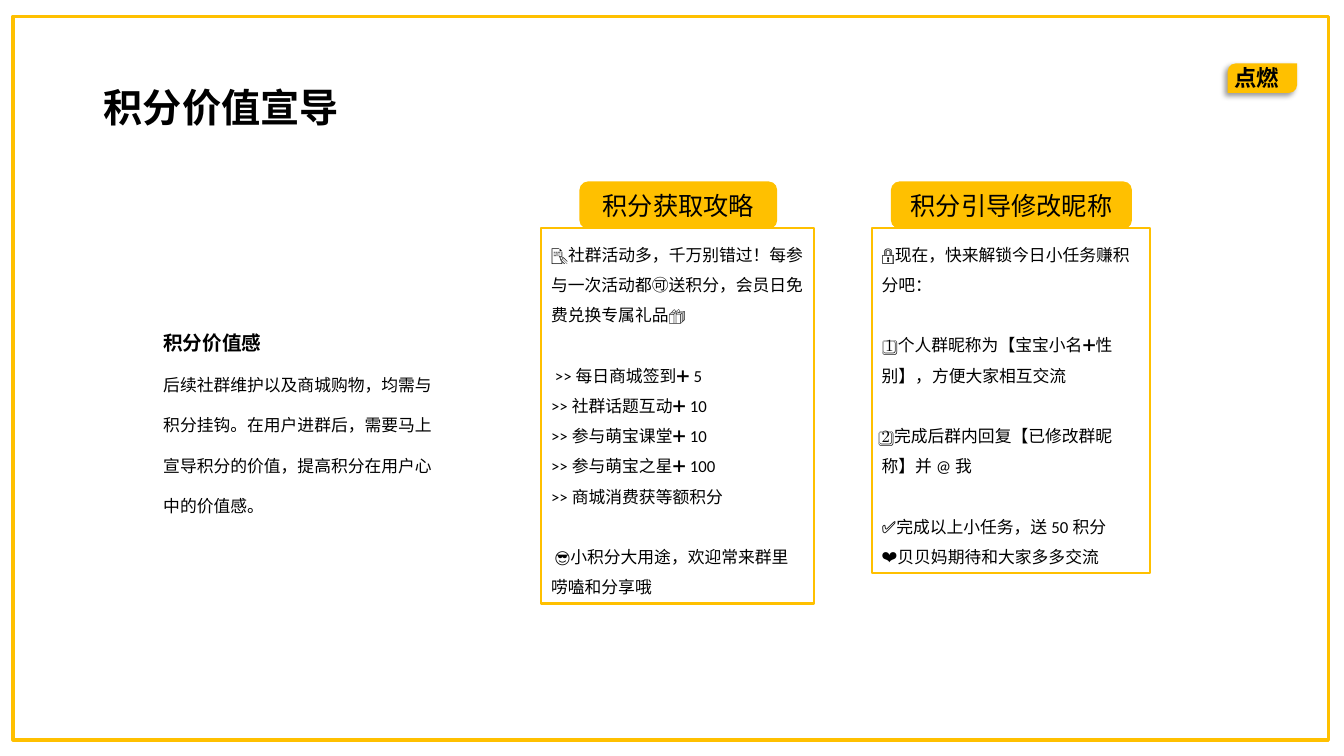
import pptx
import pptx.dml.color
import pptx.enum.shapes
import pptx.enum.text
import pptx.oxml
import pptx.oxml.ns
import pptx.util

Cm = pptx.util.Cm
Pt = pptx.util.Pt
SHAPE = pptx.enum.shapes.MSO_SHAPE
ALIGN = pptx.enum.text.PP_ALIGN
ANCHOR = pptx.enum.text.MSO_ANCHOR
AMBER, BLACK = "FFC000", "000000"
BLOCK_GAP = 21.6  # one line of the card text, in points


def paint(color_format, hex_color):
    color_format.rgb = pptx.dml.color.RGBColor.from_string(hex_color)


def write(frame, lines, align=ALIGN.LEFT, spacing=1.0, anchor=ANCHOR.MIDDLE):
    """Fill a text frame with (text, size, bold, space before) lines."""
    frame.word_wrap = True
    frame.auto_size = pptx.enum.text.MSO_AUTO_SIZE.NONE
    frame.vertical_anchor = anchor
    for number, (text, size, bold, before) in enumerate(lines):
        paragraph = frame.add_paragraph() if number else frame.paragraphs[0]
        properties = paragraph._p.get_or_add_pPr()
        properties.set("marL", "0")
        properties.set("indent", "0")
        properties.append(pptx.oxml.parse_xml(
            f'<a:buNone {pptx.oxml.ns.nsdecls("a")}/>'))
        paragraph.alignment = align
        paragraph.line_spacing = spacing
        paragraph.space_before = Pt(before)
        run = paragraph.add_run()
        run.text = text
        run.font.name = "Calibri"
        run.font.size = Pt(size)
        run.font.bold = bold
        paint(run.font.color, BLACK)


deck = pptx.Presentation()
deck.slide_width, deck.slide_height = Cm(33.87), Cm(19.05)
slide = deck.slides.add_slide(deck.slide_layouts[1])
shapes = slide.shapes

# Page frame
border = shapes.add_shape(SHAPE.RECTANGLE, Cm(0.33), Cm(0.41), Cm(33.15), Cm(18.24))
border.shadow.inherit = False
border.fill.background()
paint(border.line.color, AMBER)
border.line.width = Pt(2.25)

# Corner tag
tag = shapes.add_shape(SHAPE.ROUND_2_DIAG_RECTANGLE, Cm(30.94), Cm(1.6), Cm(1.75), Cm(0.74))
tag.adjustments[0] = 0.274
tag.fill.solid()
paint(tag.fill.fore_color, AMBER)
tag.line.fill.background()
tag.shadow.inherit = False
effects = tag._element.spPr.find(pptx.oxml.ns.qn("a:effectLst"))
effects.append(pptx.oxml.parse_xml(
    f'<a:outerShdw {pptx.oxml.ns.nsdecls("a")} blurRad="{Pt(4)}" dist="{Pt(3)}" '
    'dir="8100000" algn="tr" rotWithShape="0">'
    f'<a:srgbClr val="{BLACK}"><a:alpha val="40000"/></a:srgbClr></a:outerShdw>'))
tag_label = shapes.add_textbox(Cm(30.86), Cm(1.5), Cm(1.75), Cm(0.94))
write(tag_label.text_frame, [("点燃", 16, True, 0)], anchor=ANCHOR.TOP)

# Title and explanation
title = shapes.title
title.left, title.top, title.width, title.height = Cm(2.16), Cm(1.96), Cm(6.83), Cm(1.45)
write(title.text_frame, [("积分价值宣导", 28, True, 0)], ALIGN.CENTER, anchor=ANCHOR.TOP)

value = slide.placeholders[1]
value.left, value.top, value.width, value.height = Cm(3.86), Cm(7.62), Cm(7.67), Cm(5.56)
write(value.text_frame, [
    ("积分价值感", 14, True, 0),
    ("后续社群维护以及商城购物，均需与积分挂钩。在用户进群后，需要马上"
     "宣导积分的价值，提高积分在用户心中的价值感。", 12, False, 0),
], spacing=2.0, anchor=ANCHOR.TOP)

# Cards: heading, heading left and width, card left, width and height, text blocks
cards = [
    ("积分获取攻略", 14.63, 4.93, 13.64, 6.88, 9.47, [
        ["📝社群活动多，千万别错过！每参与一次活动都🉑️送积分，会员日免费兑换专属礼品🎁"],
        [" >>每日商城签到➕5", ">>社群话题互动➕10", ">>参与萌宝课堂➕10",
         ">>参与萌宝之星➕100", ">>商城消费获等额积分"],
        [" 😎小积分大用途，欢迎常来群里唠嗑和分享哦"],
    ]),
    ("积分引导修改昵称", 22.48, 6.02, 21.97, 7.01, 8.71, [
        ["🔒现在，快来解锁今日小任务赚积分吧："],
        [" 1⃣️个人群昵称为【宝宝小名➕性别】，方便大家相互交流"],
        ["2⃣️完成后群内回复【已修改群昵称】并@我"],
        ["✅完成以上小任务，送50积分", "❤️贝贝妈期待和大家多多交流"],
    ]),
]
for heading, tab_left, tab_width, left, width, height, blocks in cards:
    card = shapes.add_shape(SHAPE.RECTANGLE, Cm(left), Cm(5.74), Cm(width), Cm(height))
    card.fill.background()
    lines = [(text, 12, False, BLOCK_GAP if block and not row else 0)
             for block, texts in enumerate(blocks) for row, text in enumerate(texts)]
    write(card.text_frame, lines, spacing=1.5)

    tab = shapes.add_shape(SHAPE.ROUNDED_RECTANGLE, Cm(tab_left), Cm(4.6), Cm(tab_width), Cm(1.14))
    tab.fill.solid()
    paint(tab.fill.fore_color, AMBER)
    write(tab.text_frame, [(heading, 18, False, 0)], ALIGN.CENTER)

    for part in (card, tab):
        part.shadow.inherit = False
        paint(part.line.color, AMBER)
        part.line.width = Pt(1.5)

deck.save("out.pptx")
